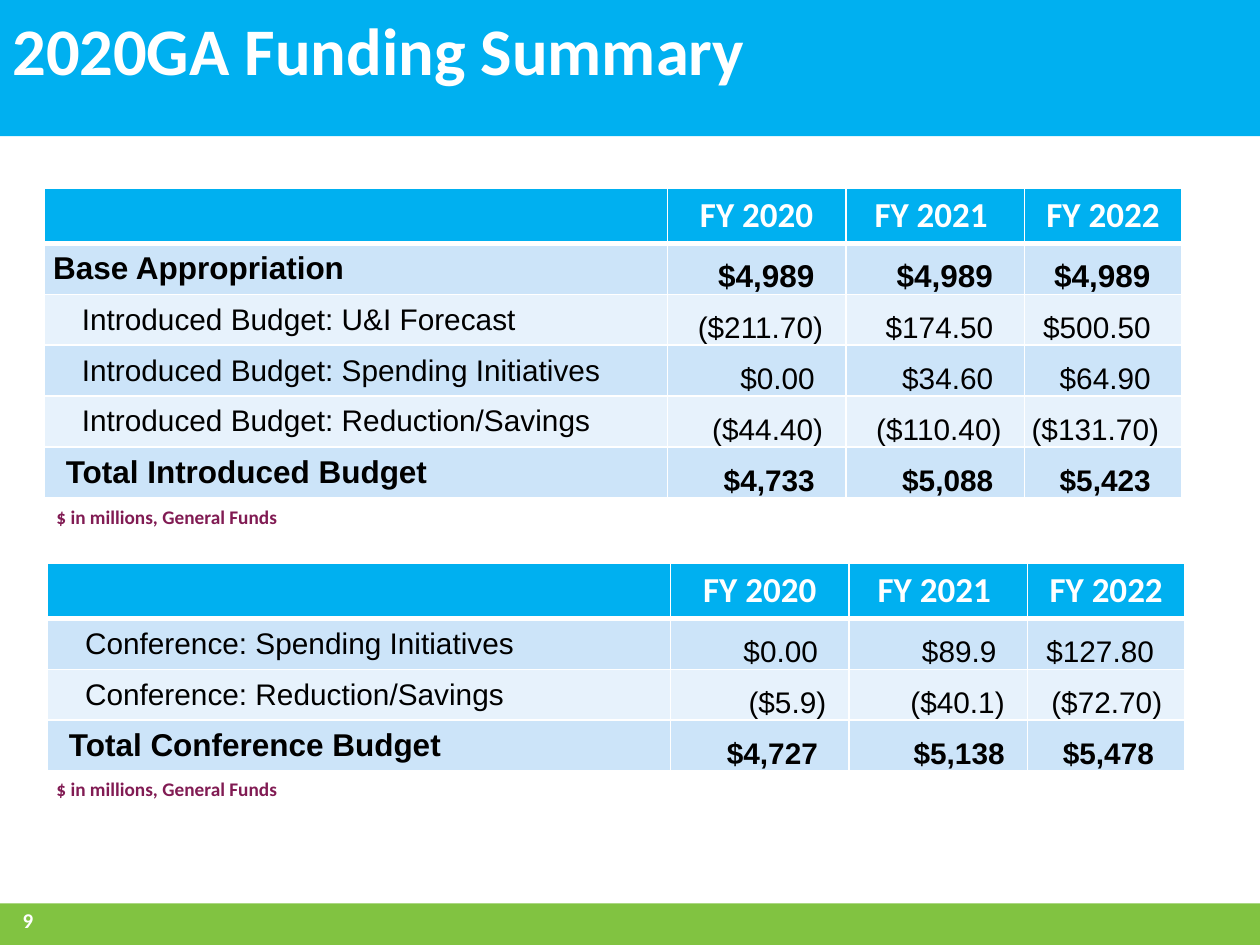
from lxml import etree
from pptx import Presentation
from pptx.dml.color import RGBColor
from pptx.enum import shapes, text
from pptx.oxml import ns
from pptx.util import Pt

TITLE = "2020GA Funding Summary"
NOTE = "$ in millions, General Funds"
PAGE_NUMBER = "9"
YEARS = ["", "FY 2020", "FY 2021 ", "FY 2022"]

# row style, label, amounts
INTRODUCED = [
    ("base", "Base Appropriation", ["$4,989 ", "$4,989 ", "$4,989 "]),
    ("item", "Introduced Budget: U&I Forecast", ["($211.70)", "$174.50 ", "$500.50 "]),
    ("item", "Introduced Budget: Spending Initiatives", ["$0.00 ", "$34.60 ", "$64.90 "]),
    ("item", "Introduced Budget: Reduction/Savings", ["($44.40)", "($110.40)", "($131.70)"]),
    ("total", "Total Introduced Budget", ["$4,733 ", "$5,088 ", "$5,423 "]),
]
CONFERENCE = [
    ("item", "Conference: Spending Initiatives", ["$0.00 ", "$89.9 ", "$127.80 "]),
    ("item", "Conference: Reduction/Savings", ["($5.9)", "($40.1)", "($72.70)"]),
    ("total", "Total Conference Budget", ["$4,727 ", "$5,138", "$5,478 "]),
]
# left, top, rows, top of the note
TABLES = [(25.4, 107.5, INTRODUCED, 285), (27.2, 321.8, CONFERENCE, 440.6)]
# label indent, label size, amount size, bold
ROW_STYLES = {
    "base": (5, 18, 18, True),
    "item": (21.4, 17, 17, False),
    "total": (12.2, 18, 17, True),
}

WHITE = RGBColor(0xFF, 0xFF, 0xFF)
BLACK = RGBColor(0x00, 0x00, 0x00)
BLUE = RGBColor(0x00, 0xB0, 0xF0)
GREEN = RGBColor(0x81, 0xC3, 0x41)
PLUM = RGBColor(0x81, 0x1B, 0x53)
BANDS = [RGBColor(0xCC, 0xE4, 0xF9), RGBColor(0xE7, 0xF2, 0xFC)]

WIDTH, HEIGHT = 720, 540
BANNER_HEIGHT, FOOTER_HEIGHT = 77.8, 23.8
COLUMNS = [356, 102, 102, 90]
HEADER_ROW, BODY_ROW = 31.6, 29.1
AMOUNT_INSET = 13
THIN, THICK = 1, 3

LEFT, CENTER, RIGHT = (text.PP_ALIGN.LEFT, text.PP_ALIGN.CENTER, text.PP_ALIGN.RIGHT)
TOP, MIDDLE, BOTTOM = (text.MSO_ANCHOR.TOP, text.MSO_ANCHOR.MIDDLE, text.MSO_ANCHOR.BOTTOM)


def write(frame, words, size, color, font="Calibri", bold=True, align=LEFT):
    para = frame.paragraphs[0]
    para.alignment = align
    span = para.add_run()
    span.text = words
    span.font.size = Pt(size)
    span.font.bold = bold
    span.font.color.rgb = color
    span.font.name = font
    return span


def add_band(page, top, height, color):
    band = page.shapes.add_shape(
        shapes.MSO_SHAPE.RECTANGLE, 0, Pt(top), Pt(WIDTH), Pt(height))
    band.shadow.inherit = False
    band.fill.solid()
    band.fill.fore_color.rgb = color
    band.line.fill.background()


def add_text(page, place, words, size, color, anchor=TOP, wrap=True):
    box = page.shapes.add_textbox(*[Pt(value) for value in place])
    box.text_frame.word_wrap = wrap
    box.text_frame.vertical_anchor = anchor
    return box.text_frame, write(box.text_frame, words, size, color)


def add_text_shadow(span):
    effects = etree.Element(ns.qn("a:effectLst"))
    shadow = etree.SubElement(
        effects, ns.qn("a:outerShdw"), blurRad="38100", dist="38100", dir="2700000")
    color = etree.SubElement(shadow, ns.qn("a:srgbClr"), val=str(BLACK))
    etree.SubElement(color, ns.qn("a:alpha"), val="43000")
    span.font._element.find(ns.qn("a:solidFill")).addnext(effects)


def style_cell(cell, fill, top, bottom):
    properties = cell._tc.get_or_add_tcPr()
    for side, width in (("lnL", THIN), ("lnR", THIN), ("lnT", top), ("lnB", bottom)):
        line = etree.SubElement(properties, ns.qn("a:" + side), w=str(Pt(width)))
        paint = etree.SubElement(line, ns.qn("a:solidFill"))
        etree.SubElement(paint, ns.qn("a:srgbClr"), val=str(WHITE))
    cell.fill.solid()
    cell.fill.fore_color.rgb = fill


def set_margins(cell, left, right):
    cell.margin_left, cell.margin_right = Pt(left), Pt(right)
    cell.margin_top = cell.margin_bottom = 0


def add_budget(page, left, top, rows):
    height = HEADER_ROW + BODY_ROW * len(rows)
    table = page.shapes.add_table(
        len(rows) + 1, len(COLUMNS), Pt(left), Pt(top), Pt(sum(COLUMNS)), Pt(height)).table
    for column, width in zip(table.columns, COLUMNS):
        column.width = Pt(width)
    for index, row in enumerate(table.rows):
        row.height = Pt(BODY_ROW if index else HEADER_ROW)

    for index, year in enumerate(YEARS):
        cell = table.cell(0, index)
        style_cell(cell, BLUE, THIN, THICK)
        cell.vertical_anchor = MIDDLE
        if year:
            write(cell.text_frame, year, 20, WHITE, align=CENTER)

    for number, (style, label, amounts) in enumerate(rows, 1):
        indent, label_size, amount_size, bold = ROW_STYLES[style]
        for index, words in enumerate([label] + amounts):
            cell = table.cell(number, index)
            style_cell(cell, BANDS[(number - 1) % 2], THICK if number == 1 else THIN, THIN)
            if index:
                set_margins(cell, 0, AMOUNT_INSET)
                cell.vertical_anchor = BOTTOM
                write(cell.text_frame, words, amount_size, BLACK, "Arial", bold, RIGHT)
            else:
                set_margins(cell, indent, 0)
                cell.vertical_anchor = MIDDLE
                write(cell.text_frame, words, label_size, BLACK, "Arial", bold)


def main():
    deck = Presentation()
    deck.slide_width, deck.slide_height = Pt(WIDTH), Pt(HEIGHT)
    page = deck.slides.add_slide(deck.slide_layouts[6])

    add_band(page, HEIGHT - FOOTER_HEIGHT, FOOTER_HEIGHT, GREEN)
    add_band(page, 0, BANNER_HEIGHT, BLUE)
    frame, title = add_text(page, (0, 0, WIDTH, BANNER_HEIGHT), TITLE, 38, WHITE)
    frame.margin_top = Pt(5)
    add_text_shadow(title)
    frame, _ = add_text(page, (5.8, 511.2, 102, 28.8), PAGE_NUMBER, 12, WHITE, MIDDLE)

    for left, top, rows, note_top in TABLES:
        add_budget(page, left, top, rows)
        add_text(page, (25.2, note_top, 246, 21.6), NOTE, 11, PLUM, wrap=False)

    deck.save("out.pptx")


if __name__ == "__main__":
    main()
